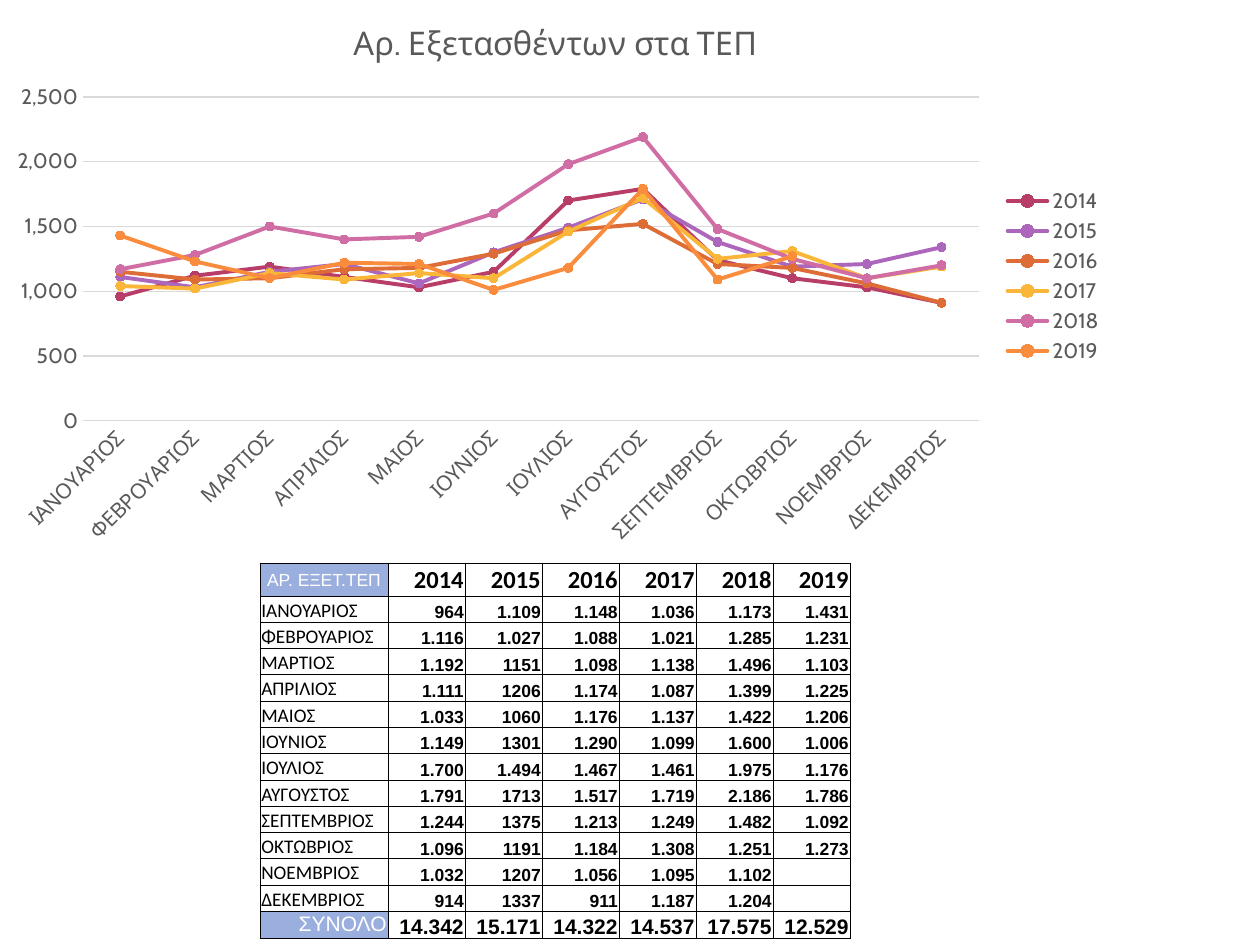
from pptx import Presentation
from pptx.chart.data import CategoryChartData
from pptx.dml.color import RGBColor
from pptx.enum.chart import (XL_CHART_TYPE as ChartType, XL_LEGEND_POSITION as LegendPos,
                             XL_MARKER_STYLE as Marker, XL_TICK_MARK as Tick)
from pptx.enum.text import MSO_ANCHOR as Anchor, PP_ALIGN as Align
from pptx.oxml import parse_xml
from pptx.oxml.ns import nsdecls
from pptx.util import Emu, Pt

# Content
TITLE = "Αρ. Εξετασθέντων στα ΤΕΠ"
CORNER = "ΑΡ. ΕΞΕΤ.ΤΕΠ"
YEARS = ["2014", "2015", "2016", "2017", "2018", "2019"]
MONTHS = [
    ("ΙΑΝΟΥΑΡΙΟΣ", "964", "1.109", "1.148", "1.036", "1.173", "1.431"),
    ("ΦΕΒΡΟΥΑΡΙΟΣ", "1.116", "1.027", "1.088", "1.021", "1.285", "1.231"),
    ("ΜΑΡΤΙΟΣ", "1.192", "1151", "1.098", "1.138", "1.496", "1.103"),
    ("ΑΠΡΙΛΙΟΣ", "1.111", "1206", "1.174", "1.087", "1.399", "1.225"),
    ("ΜΑΙΟΣ", "1.033", "1060", "1.176", "1.137", "1.422", "1.206"),
    ("ΙΟΥΝΙΟΣ", "1.149", "1301", "1.290", "1.099", "1.600", "1.006"),
    ("ΙΟΥΛΙΟΣ", "1.700", "1.494", "1.467", "1.461", "1.975", "1.176"),
    ("ΑΥΓΟΥΣΤΟΣ", "1.791", "1713", "1.517", "1.719", "2.186", "1.786"),
    ("ΣΕΠΤΕΜΒΡΙΟΣ", "1.244", "1375", "1.213", "1.249", "1.482", "1.092"),
    ("ΟΚΤΩΒΡΙΟΣ", "1.096", "1191", "1.184", "1.308", "1.251", "1.273"),
    ("ΝΟΕΜΒΡΙΟΣ", "1.032", "1207", "1.056", "1.095", "1.102", ""),
    ("ΔΕΚΕΜΒΡΙΟΣ", "914", "1337", "911", "1.187", "1.204", ""),
]
TOTALS = ("ΣΥΝΟΛΟ", "14.342", "15.171", "14.322", "14.537", "17.575", "12.529")

# Colours and text formats
COLORS = {"text": "000000", "white": "FFFFFF", "label": "9BAFDE", "axis": "595959",
          "grid": "D9D9D9", "2014": "B83D68", "2015": "AC66BB", "2016": "DE6C36",
          "2017": "F9B639", "2018": "CF6DA4", "2019": "FA8D3D"}
FORMATS = {
    "corner": dict(name="Arial", size=Pt(10), bold=False, color="white"),
    "year": dict(name="Calibri", size=Pt(14), bold=True, color="text"),
    "month": dict(name="Calibri", size=Pt(11), bold=False, color="text"),
    "value": dict(name="Arial", size=Pt(10), bold=True, color="text"),
    "sum label": dict(name="Arial", size=Pt(12), bold=False, color="white"),
    "sum": dict(name="Arial", size=Pt(12), bold=True, color="text"),
    "chart": dict(name="Cabin", size=Pt(10), bold=False, color="text"),
    "title": dict(name="Cabin", size=Pt(18.6), bold=False, color="axis"),
    "axis": dict(name="Cabin", size=Pt(12), bold=False, color="axis"),
}

# Geometry in px
PX = 7257.14
PAGE = (1260, 945)
CHART = (-5, -4, 1121, 560)
PLOT = (83, 97, 896, 324)
TABLE = (260, 563, 590, 376)
LABEL_WIDTH, HEAD_HEIGHT, TOTAL_HEIGHT = 128, 33, 27
INSET = Pt(0.75)


def px(length):
    return Emu(round(length * PX))


def rgb(key):
    return RGBColor.from_string(COLORS[key])


def style(font, key):
    for name, value in FORMATS[key].items():
        if name == "color":
            font.color.rgb = rgb(value)
        else:
            setattr(font, name, value)


def border(cell):
    props = cell._tc.get_or_add_tcPr()
    for index, side in enumerate(("lnL", "lnR", "lnT", "lnB")):
        props.insert(index, parse_xml(
            f'<a:{side} {nsdecls("a")} w="6350"><a:solidFill>'
            f'<a:srgbClr val="{COLORS["text"]}"/></a:solidFill></a:{side}>'))


def fill_cell(cell, text, key, align, anchor):
    cell.margin_left = cell.margin_right = cell.margin_top = INSET
    cell.margin_bottom = 0
    cell.vertical_anchor = anchor
    if key in ("corner", "sum label"):
        cell.fill.solid()
        cell.fill.fore_color.rgb = rgb("label")
    else:
        cell.fill.background()
    border(cell)
    para = cell.text_frame.paragraphs[0]
    para.alignment = align
    if text:
        span = para.add_run()
        span.text = text
        style(span.font, key)
    else:  # keeps an empty cell from stretching its row
        para._p.append(parse_xml(f'<a:endParaRPr {nsdecls("a")} sz="1000"/>'))


def add_table(page):
    rows = [(CORNER, *YEARS), *MONTHS, TOTALS]
    last = len(rows) - 1
    table = page.shapes.add_table(len(rows), len(rows[0]), *map(px, TABLE)).table
    table.first_row = table.horz_banding = False
    for index, column in enumerate(table.columns):
        column.width = px((TABLE[2] - LABEL_WIDTH) / len(YEARS) if index else LABEL_WIDTH)
    month_height = (TABLE[3] - HEAD_HEIGHT - TOTAL_HEIGHT) / len(MONTHS)
    for r, row in enumerate(rows):
        table.rows[r].height = px({0: HEAD_HEIGHT, last: TOTAL_HEIGHT}.get(r, month_height))
        keys = {0: ("corner", "year"), last: ("sum label", "sum")}.get(r, ("month", "value"))
        for c, text in enumerate(row):
            key = keys[min(c, 1)]
            align = {"corner": Align.CENTER, "month": Align.LEFT}.get(key, Align.RIGHT)
            anchor = (Anchor.MIDDLE if r == 0 else
                      Anchor.TOP if key == "sum label" else Anchor.BOTTOM)
            fill_cell(table.cell(r, c), text, key, align, anchor)


def chart_value(text):
    """Number for the chart, rounded to tens; None for an empty cell."""
    return round(int(text.replace(".", "")), -1) if text else None


def place_plot(chart):
    area = chart._chartSpace.chart.plotArea
    for old in area.findall("{*}layout"):
        area.remove(old)
    x, y = [(PLOT[i] - CHART[i]) / CHART[i + 2] for i in (0, 1)]
    w, h = [PLOT[i] / CHART[i] for i in (2, 3)]
    sizes = "".join(f'<c:{name} val="{value:.4f}"/>'
                    for name, value in zip("xywh", (x, y, w, h)))
    area.insert(0, parse_xml(
        f'<c:layout {nsdecls("c")}><c:manualLayout><c:layoutTarget val="inner"/>'
        f'<c:xMode val="edge"/><c:yMode val="edge"/>{sizes}</c:manualLayout></c:layout>'))


def add_chart(page):
    data = CategoryChartData(number_format="#,##0")
    data.categories = [row[0] for row in MONTHS]
    for index, year in enumerate(YEARS, 1):
        data.add_series(year, [chart_value(row[index]) for row in MONTHS])
    chart = page.shapes.add_chart(ChartType.LINE_MARKERS, *map(px, CHART), data).chart
    style(chart.font, "chart")

    # Title and legend
    chart.has_title = True
    span = chart.chart_title.text_frame.paragraphs[0].add_run()
    span.text = TITLE
    style(span.font, "title")
    chart.chart_title.include_in_layout = False
    chart.has_legend = True
    chart.legend.position = LegendPos.RIGHT
    chart.legend.include_in_layout = False
    style(chart.legend.font, "axis")

    # Axes
    months, counts = chart.category_axis, chart.value_axis
    for axis in (months, counts):
        axis.major_tick_mark = axis.minor_tick_mark = Tick.NONE
        style(axis.tick_labels.font, "axis")
    months._element.txPr.bodyPr.set("rot", "-2700000")
    counts.minimum_scale, counts.maximum_scale, counts.major_unit = 0, 2500, 500
    counts.tick_labels.number_format = "#,##0"
    counts.tick_labels.number_format_is_linked = False
    counts.format.line.fill.background()
    for line in (months.format.line, counts.major_gridlines.format.line):
        line.color.rgb = rgb("grid")
        line.width = Pt(0.75)

    # Series
    chart.plots[0].vary_by_categories = False
    for series in chart.plots[0].series:
        series.smooth = False
        series.format.line.width = Pt(2.25)
        series.marker.style = Marker.CIRCLE
        series.marker.size = 5
        series.marker.format.fill.solid()
        series.marker.format.fill.fore_color.rgb = rgb(series.name)
        for part in (series, series.marker):
            part.format.line.color.rgb = rgb(series.name)
        series._element.spPr.ln.set("cap", "rnd")
    place_plot(chart)


def main():
    deck = Presentation()
    deck.slide_width, deck.slide_height = map(px, PAGE)
    page = deck.slides.add_slide(deck.slide_layouts[6])
    add_table(page)
    add_chart(page)
    deck.save("out.pptx")


if __name__ == "__main__":
    main()
